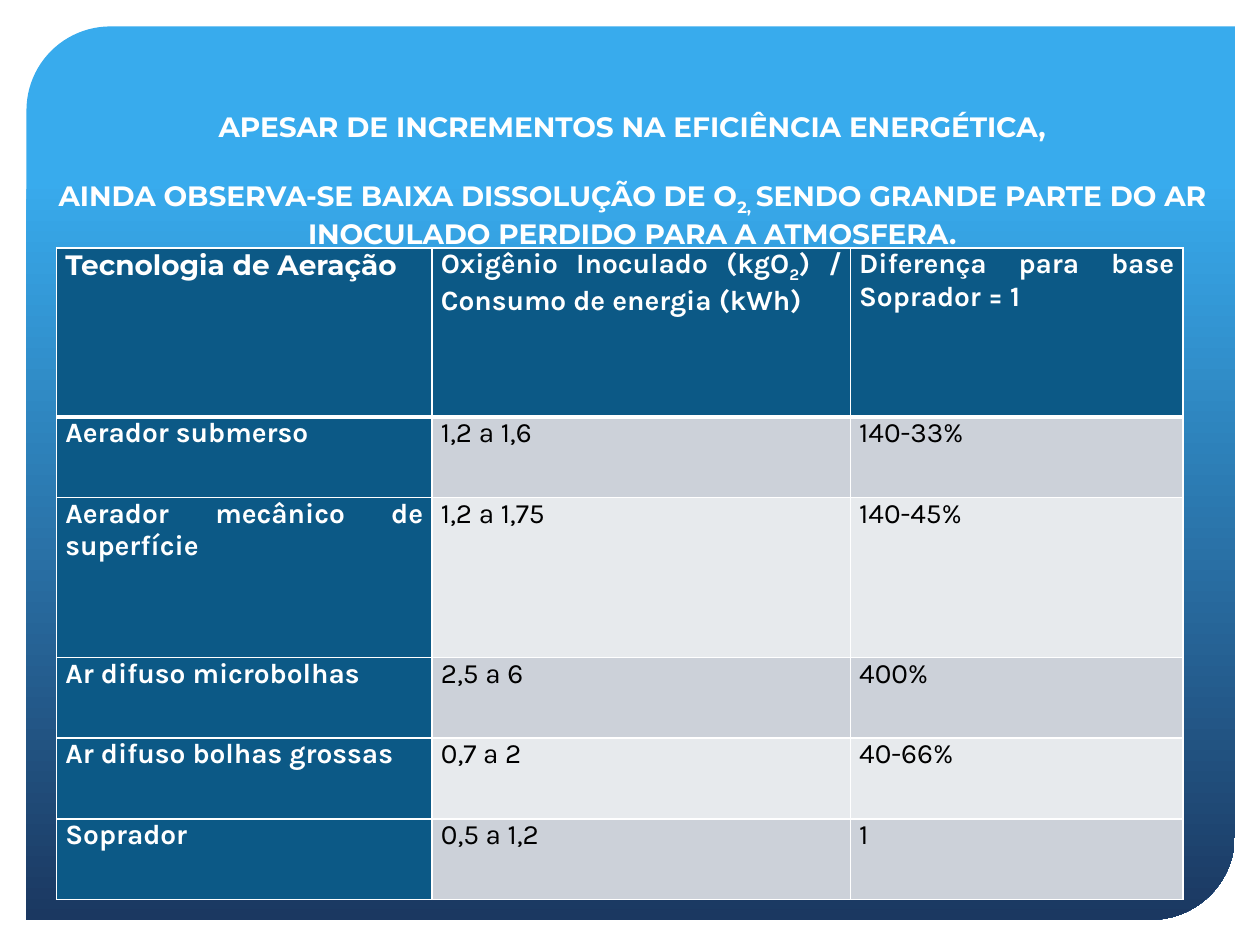
from dataclasses import dataclass

from lxml.etree import SubElement
from pptx import Presentation
from pptx.dml.color import RGBColor
from pptx.enum.shapes import MSO_SHAPE
from pptx.enum.text import PP_ALIGN
from pptx.oxml.ns import qn
from pptx.util import Inches, Pt

COLORS = {
    "sky": "38ABED",
    "navy": "1B3861",
    "header": "0C5986",
    "band_dark": "CCD1D9",
    "band_light": "E7EAED",
    "white": "FFFFFF",
    "black": "000000",
}
HEADING_FONT, BODY_FONT = "Montserrat", "Karla"


@dataclass(frozen=True)
class Style:
    font: str
    color: str
    bold: bool
    align: PP_ALIGN


HEADING = Style(HEADING_FONT, "white", True, PP_ALIGN.CENTER)
CORNER = Style(HEADING_FONT, "white", True, PP_ALIGN.JUSTIFY)
LABEL = Style(BODY_FONT, "white", True, PP_ALIGN.JUSTIFY)
VALUE = Style(BODY_FONT, "black", False, PP_ALIGN.JUSTIFY)

HEADING_LINES = [
    ["APESAR DE INCREMENTOS NA EFICIÊNCIA ENERGÉTICA,"],
    ["AINDA OBSERVA-SE BAIXA DISSOLUÇÃO DE O", "2, ",
     "SENDO GRANDE PARTE DO AR INOCULADO PERDIDO PARA A ATMOSFERA."],
]
ROWS = [
    [["Tecnologia de Aeração"],
     ["Oxigênio Inoculado (kgO", "2", ") / Consumo de energia (kWh)"],
     ["Diferença para base Soprador = 1"]],
    [["Aerador submerso"], ["1,2 a 1,6"], ["140-33%"]],
    [["Aerador mecânico de superfície"], ["1,2 a 1,75"], ["140-45%"]],
    [["Ar difuso microbolhas"], ["2,5 a 6"], ["400%"]],
    [["Ar difuso bolhas grossas"], ["0,7 a 2"], ["40-66%"]],
    [["Soprador"], ["0,5 a 1,2"], ["1"]],
]
COL_WIDTHS = [2.98, 3.32, 2.64]
ROW_HEIGHTS = [1.34, 0.64, 1.27, 0.64, 0.64, 0.64]


def rgb(name: str) -> RGBColor:
    return RGBColor.from_string(COLORS[name])


def write(p, parts: list[str], style: Style) -> None:
    """Fill a paragraph; every second part is a subscript."""
    p.alignment = style.align
    for i, part in enumerate(parts):
        r = p.add_run()
        r.text = part
        r.font.name = style.font
        r.font.size = Pt(16)
        r.font.bold = style.bold
        r.font.color.rgb = rgb(style.color)
        if i % 2:
            r.font._element.set("baseline", "-25000")


def add_backdrop(s) -> None:
    sp = s.shapes.add_shape(MSO_SHAPE.ROUND_2_DIAG_RECTANGLE, Inches(0.21),
                            Inches(0.21), Inches(9.59), Inches(7.09))
    sp.shadow.inherit = False
    sp.adjustments[0] = 0.094
    sp.adjustments[1] = 0
    sp.line.fill.background()
    sp.fill.gradient()
    sp.fill.gradient_angle = 270
    stops = [(0.17, "sky"), (1, "navy")]
    for stop, (position, color) in zip(sp.fill.gradient_stops, stops):
        stop.position = position
        stop.color.rgb = rgb(color)


def add_heading(s) -> None:
    tf = s.shapes.add_textbox(Inches(0.19), Inches(0.82),
                              Inches(9.66), Inches(5.35)).text_frame
    tf.word_wrap = True
    for i, parts in enumerate(HEADING_LINES):
        p = tf.add_paragraph() if i else tf.paragraphs[0]
        if i:
            p.space_before = Pt(20)
        write(p, parts, HEADING)


def set_borders(cell, top: float, bottom: float) -> None:
    tc_pr = cell._tc.get_or_add_tcPr()
    for side, width in (("L", 1), ("R", 1), ("T", top), ("B", bottom)):
        ln = SubElement(tc_pr, qn(f"a:ln{side}"), w=str(Pt(width)))
        fill = SubElement(ln, qn("a:solidFill"))
        SubElement(fill, qn("a:srgbClr"), val=COLORS["white"])


def cell_look(row: int, col: int) -> tuple[Style, str]:
    """Return the text style and the fill colour of a cell."""
    if row == 0 and col == 0:
        return CORNER, "header"
    if row == 0 or col == 0:
        return LABEL, "header"
    return VALUE, "band_dark" if row % 2 else "band_light"


def add_aeration_table(s) -> None:
    table = s.shapes.add_table(
        len(ROWS), len(COL_WIDTHS), Inches(0.45), Inches(1.97),
        Inches(sum(COL_WIDTHS)), Inches(sum(ROW_HEIGHTS))).table
    for column, width in zip(table.columns, COL_WIDTHS):
        column.width = Inches(width)
    for i, (height, row) in enumerate(zip(ROW_HEIGHTS, ROWS)):
        table.rows[i].height = Inches(height)
        for j, parts in enumerate(row):
            cell = table.cell(i, j)
            style, fill = cell_look(i, j)
            cell.margin_left = cell.margin_right = Inches(0.07)
            cell.margin_top = cell.margin_bottom = 0
            set_borders(cell, 3 if i == 1 else 1, 3 if i == 0 else 1)
            cell.fill.solid()
            cell.fill.fore_color.rgb = rgb(fill)
            write(cell.text_frame.paragraphs[0], parts, style)


def main() -> None:
    prs = Presentation()
    prs.slide_width, prs.slide_height = Inches(10), Inches(7.5)
    s = prs.slides.add_slide(prs.slide_layouts[6])
    add_backdrop(s)
    add_heading(s)
    add_aeration_table(s)
    prs.save("out.pptx")


if __name__ == "__main__":
    main()
